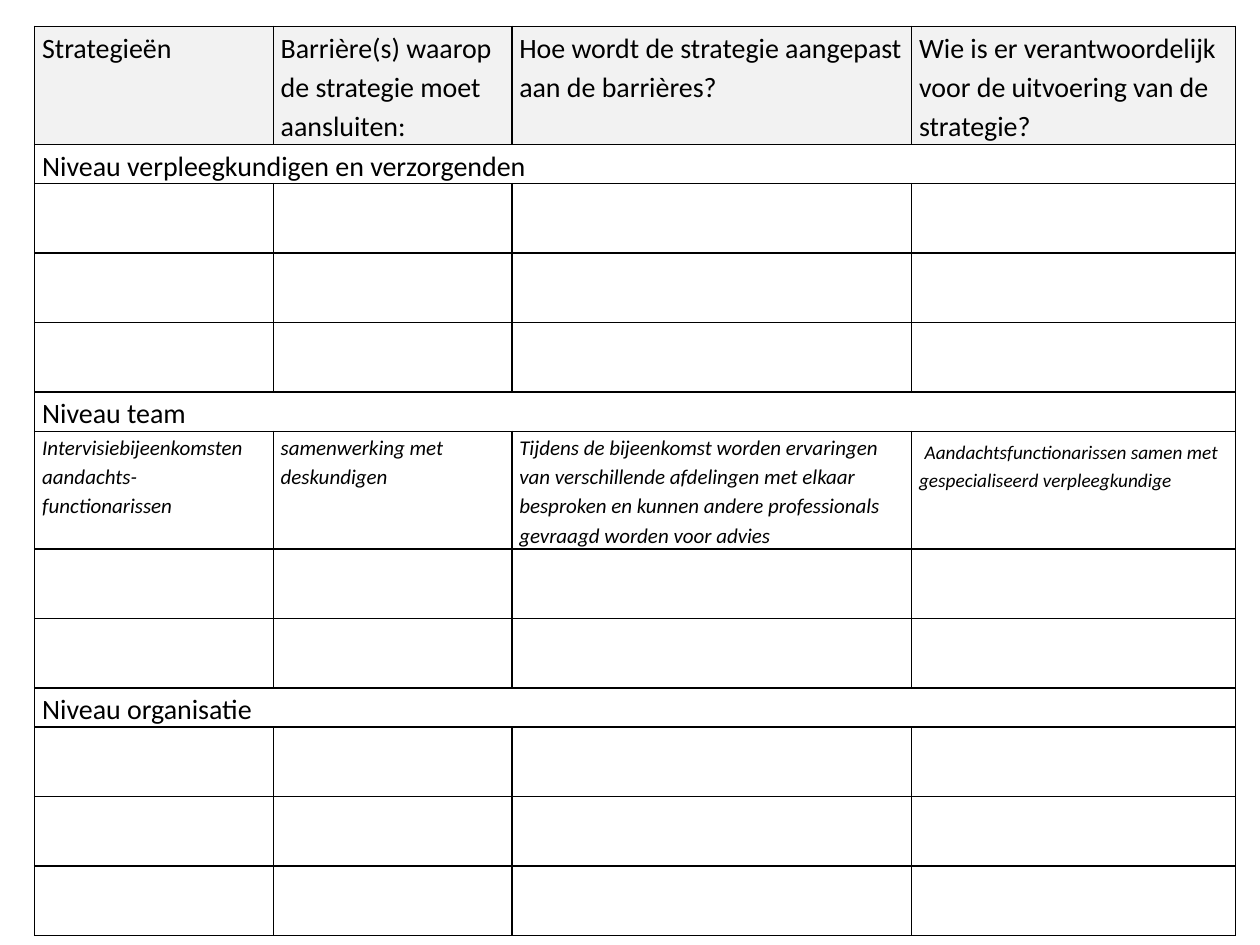
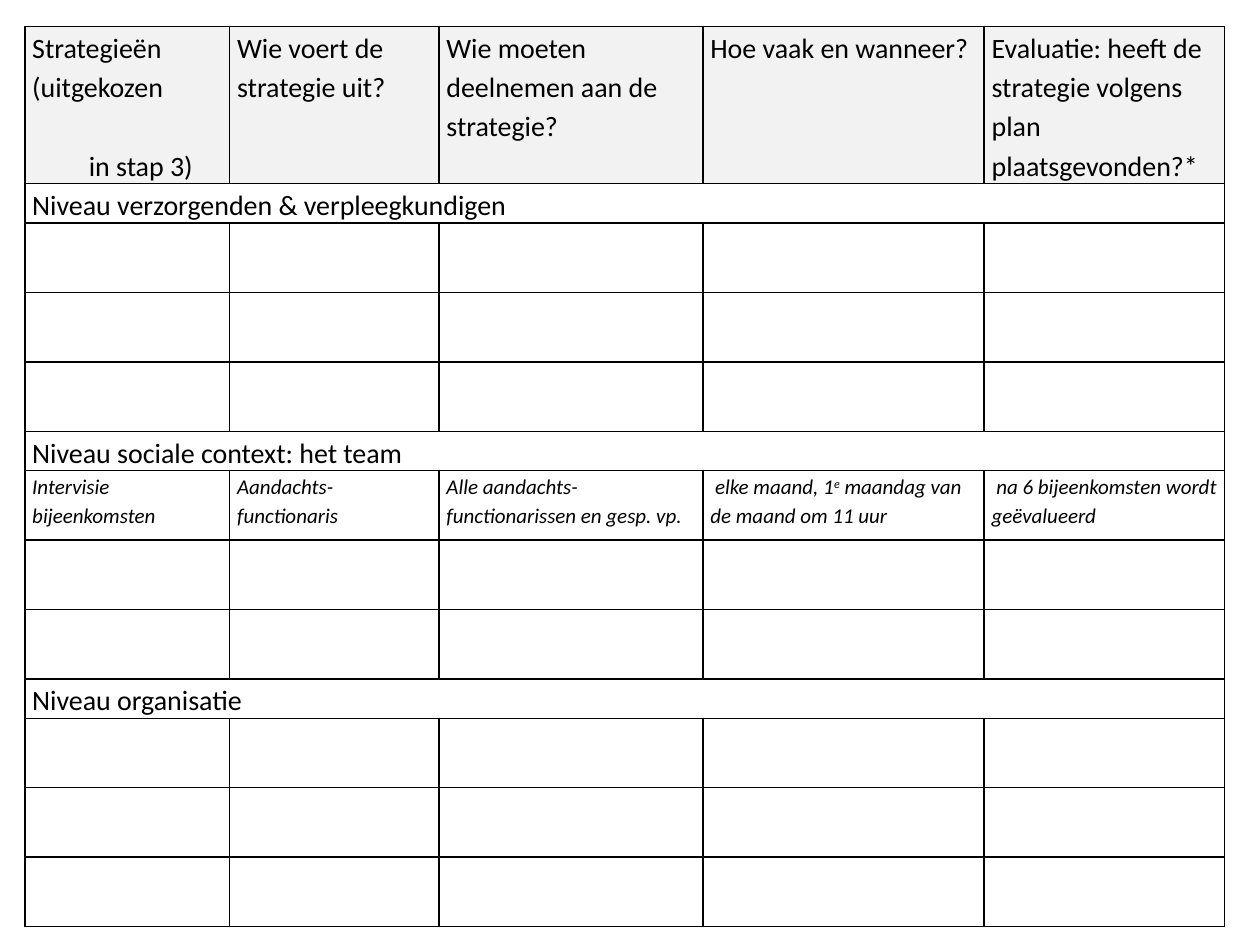
import pptx
import pptx.dml.color
import pptx.oxml
import pptx.oxml.ns
import pptx.util
from pptx.util import Cm, Pt

BLACK = pptx.dml.color.RGBColor(0x00, 0x00, 0x00)
HEADER_GREY = pptx.dml.color.RGBColor(0xF2, 0xF2, 0xF2)
FONT = "Calibri"
LINE_SPACING = 1.15
HEADING_SIZE, EXAMPLE_SIZE = 16, 12

TABLE_TOP = 0.53
LEVEL_HEIGHT, ENTRY_HEIGHT = 0.71, 1.4
ENTRIES_PER_LEVEL = 3
EXAMPLE_ROW = 6


def draw_borders(cell):
    """Draw a thin black line on every side of a cell."""
    properties = cell._tc.get_or_add_tcPr()
    for position, side in enumerate(("lnL", "lnR", "lnT", "lnB")):
        properties.insert(position, pptx.oxml.parse_xml(
            f'<a:{side} {pptx.oxml.ns.nsdecls("a")} w="{Pt(1)}"><a:solidFill>'
            f'<a:srgbClr val="{BLACK}"/></a:solidFill></a:{side}>'))


def format_run(run, size, italic):
    run.font.name = FONT
    run.font.size = Pt(size)
    run.font.italic = italic
    run.font.color.rgb = BLACK


def write(cell, text, size, italic=False):
    cell.text_frame.text = text
    for paragraph in cell.text_frame.paragraphs:
        paragraph.line_spacing = LINE_SPACING
        for run in paragraph.runs:
            format_run(run, size, italic)


def append_run(cell, text, size):
    """Continue the first paragraph of an example cell."""
    run = cell.text_frame.paragraphs[0].add_run()
    run.text = text
    format_run(run, size, True)
    return run


def add_plan(slide, left, widths, header_height, headings, levels, examples):
    """Build a plan: headings, then a title row and entry rows per level."""
    level_heights = [LEVEL_HEIGHT] + [ENTRY_HEIGHT] * ENTRIES_PER_LEVEL
    heights = [header_height] + level_heights * len(levels)
    plan = slide.shapes.add_table(
        len(heights), len(widths), Cm(left), Cm(TABLE_TOP),
        Cm(sum(widths)), Cm(sum(heights))).table
    plan.first_row = plan.horz_banding = False
    for column, width in zip(plan.columns, widths):
        column.width = Cm(width)

    # Grid
    for row_number, (row, height) in enumerate(zip(plan.rows, heights)):
        row.height = Cm(height)
        for cell in row.cells:
            cell.margin_left = cell.margin_right = Cm(0.15)
            cell.margin_top = cell.margin_bottom = 0
            if row_number == 0:
                cell.fill.solid()
                cell.fill.fore_color.rgb = HEADER_GREY
            else:
                cell.fill.background()
            draw_borders(cell)

    # Wording
    for column, (heading, example) in enumerate(zip(headings, examples)):
        write(plan.cell(0, column), heading, HEADING_SIZE)
        write(plan.cell(EXAMPLE_ROW, column), example, EXAMPLE_SIZE, True)
    for number, level in enumerate(levels):
        row_number = 1 + number * len(level_heights)
        title = plan.cell(row_number, 0)
        title.merge(plan.cell(row_number, len(widths) - 1))
        write(title, level, HEADING_SIZE)
    return plan


def add_strategy_slide(presentation):
    slide = presentation.slides.add_slide(presentation.slide_layouts[6])
    plan = add_plan(
        slide, 0.7, [4.81, 4.81, 8.06, 6.53], 2.38,
        ["Strategieën",
         "Barrière(s) waarop de strategie moet aansluiten:",
         "Hoe wordt de strategie aangepast aan de barrières?",
         "Wie is er verantwoordelijk voor de uitvoering van de strategie?"],
        ["Niveau verpleegkundigen en verzorgenden",
         "Niveau team",
         "Niveau organisatie"],
        ["Intervisiebijeenkomsten aandachts-functionarissen",
         "samenwerking met deskundigen",
         "Tijdens de bijeenkomst worden ervaringen van verschillende "
         "afdelingen met elkaar besproken en kunnen andere professionals "
         "gevraagd worden voor advies",
         ""])

    # Responsible people, in smaller type after a larger hard space
    responsible = plan.cell(EXAMPLE_ROW, 3)
    write(responsible, " ", 14)
    append_run(responsible, "Aandachtsfunctionarissen samen met "
               "gespecialiseerd verpleegkundige", 11)


def add_execution_slide(presentation):
    slide = presentation.slides.add_slide(presentation.slide_layouts[6])
    plan = add_plan(
        slide, 0.5, [4.13, 4.22, 5.32, 5.67, 4.85], 3,
        ["Strategieën\n(uitgekozen\nin stap 3)",
         "Wie voert de strategie uit?",
         "Wie moeten deelnemen aan de strategie?",
         "Hoe vaak en wanneer?",
         "Evaluatie: heeft de strategie volgens plan plaatsgevonden?*"],
        ["Niveau verzorgenden & verpleegkundigen",
         "Niveau sociale context: het team",
         "Niveau organisatie"],
        ["Intervisie\nbijeenkomsten",
         "Aandachts-\nfunctionaris",
         "Alle aandachts-functionarissen en gesp. vp.",
         " elke maand, 1",
         " na 6 bijeenkomsten wordt geëvalueerd"])

    # Step reference, set apart below the first heading
    step = plan.cell(0, 0).text_frame.paragraphs[2]
    step.space_before = Pt(22.5)
    step._p.get_or_add_pPr().set("marL", str(Cm(1.14)))

    # Ordinal in the meeting schedule
    schedule = plan.cell(EXAMPLE_ROW, 3)
    ordinal = append_run(schedule, "e", EXAMPLE_SIZE)
    ordinal.font._element.set("baseline", "30000")
    append_run(schedule, " maandag van de maand om 11 uur", EXAMPLE_SIZE)


def main():
    presentation = pptx.Presentation()
    presentation.slide_width = Cm(25.4)
    presentation.slide_height = Cm(19.05)
    add_strategy_slide(presentation)
    add_execution_slide(presentation)
    presentation.save("out.pptx")


if __name__ == "__main__":
    main()
